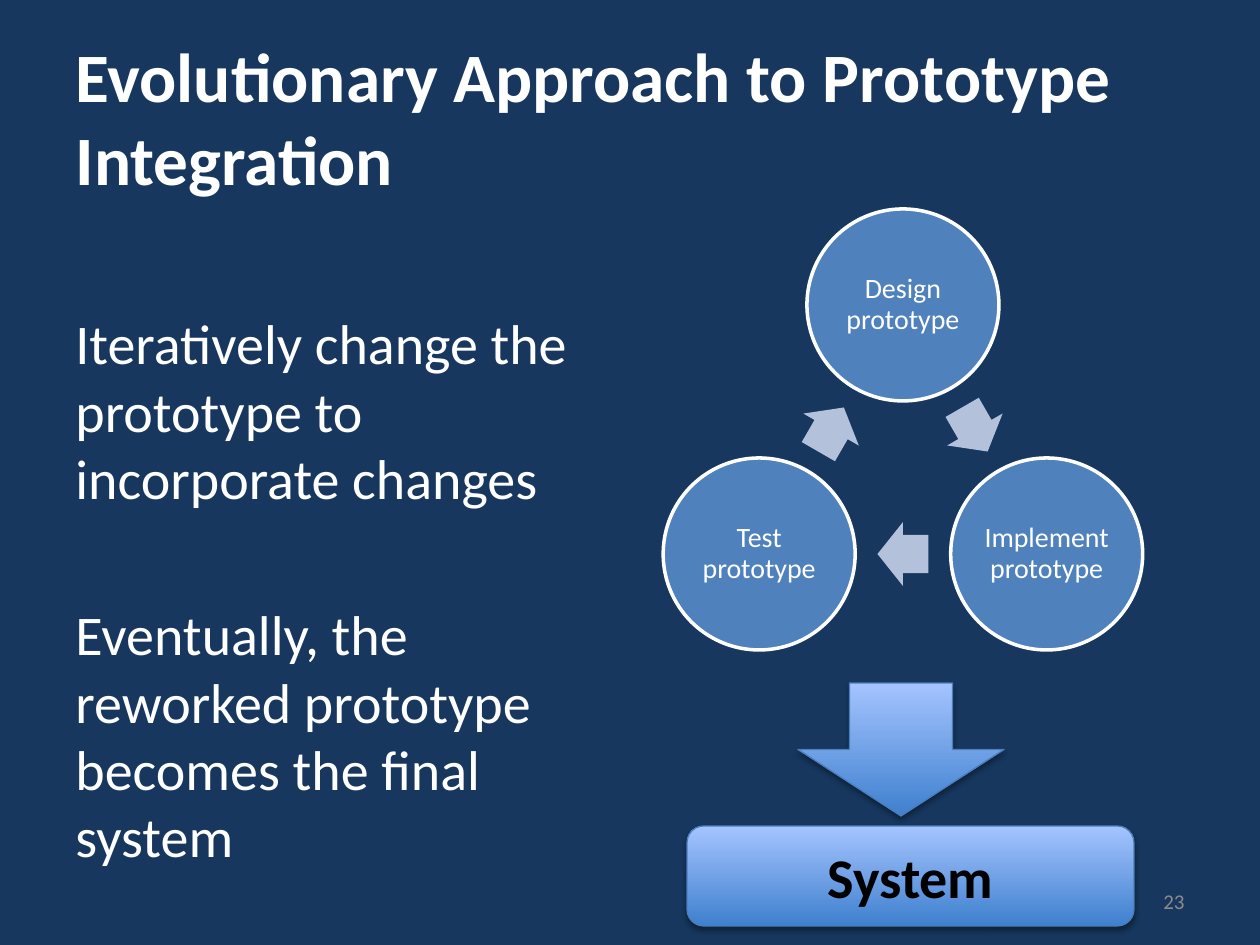
from math import cos, radians, sin

from lxml import etree
from pptx import Presentation
from pptx.dml.color import RGBColor
from pptx.enum.shapes import MSO_SHAPE as Preset
from pptx.enum.text import MSO_ANCHOR as Anchor, MSO_AUTO_SIZE as AutoSize, PP_ALIGN as Align
from pptx.oxml import parse_xml
from pptx.oxml.ns import nsdecls
from pptx.util import Emu, Pt

PX_PER_INCH = 126
FONT = "Calibri"
WHITE = "FFFFFF"
CYCLE_CENTER = (903, 471)
CYCLE_RADIUS = 166
CYCLE_STEPS = ["Design prototype", "Implement prototype", "Test prototype"]
BODY_TEXTS = [
    "Iteratively change the prototype to incorporate changes",
    "Eventually, the reworked prototype becomes the final system",
]


def px(length):
    return Emu(round(length * 914400 / PX_PER_INCH))


def color(hex_string):
    return RGBColor.from_string(hex_string)


def place(shape, left, top, width, height):
    shape.left, shape.top = px(left), px(top)
    shape.width, shape.height = px(width), px(height)


def write(shape, texts, size, hex_string, align=Align.LEFT, anchor=Anchor.MIDDLE, bold=False):
    """Fill a shape with one formatted paragraph for each text."""
    frame = shape.text_frame
    frame.text = "\n".join(texts)
    frame.word_wrap = True
    frame.auto_size = AutoSize.NONE
    frame.vertical_anchor = anchor
    for para in frame.paragraphs:
        para.alignment = align
        for span in para.runs:
            span.font.name = FONT
            span.font.size = Pt(size)
            span.font.bold = bold
            span.font.color.rgb = color(hex_string)
    return frame


def add_text(slide, bounds, texts, size, hex_string, **style):
    box = slide.shapes.add_textbox(*map(px, bounds))
    return write(box, texts, size, hex_string, **style)


def add_plain_shape(slide, preset, bounds, fill, line=None, line_width=2):
    shape = slide.shapes.add_shape(preset, *map(px, bounds))
    shape.shadow.inherit = False
    shape.fill.solid()
    shape.fill.fore_color.rgb = color(fill)
    if line:
        shape.line.color.rgb = color(line)
        shape.line.width = Pt(line_width)
    else:
        shape.line.fill.background()
    return shape


def add_glossy_shape(slide, preset, bounds):
    """Add a shape with a vertical blue gradient and a soft shadow below."""
    shape = add_plain_shape(slide, preset, bounds, "3F80CE", "4B7EBC", 0.75)
    shape.fill.gradient()
    shape.fill.gradient_angle = 90
    for stop, hex_string in zip(shape.fill.gradient_stops, ["3F80CE", "A4C4FF"]):
        stop.color.rgb = color(hex_string)
    effects = shape.element.spPr.find("{*}effectLst")
    effects.append(parse_xml(
        f'<a:outerShdw {nsdecls("a")} blurRad="{Pt(3.1)}" dist="{Pt(1.8)}" '
        'dir="5400000" rotWithShape="0"><a:srgbClr val="000000">'
        '<a:alpha val="35000"/></a:srgbClr></a:outerShdw>'))
    return shape


def orbit_bounds(angle, radius, width, height):
    """Bounds of an item centred at an angle around the cycle."""
    x = CYCLE_CENTER[0] + radius * cos(radians(angle))
    y = CYCLE_CENTER[1] + radius * sin(radians(angle))
    return x - width / 2, y - height / 2, width, height


def add_cycle(slide):
    turn = 360 / len(CYCLE_STEPS)
    for index, step in enumerate(CYCLE_STEPS):
        angle = -90 + index * turn
        circle = add_plain_shape(
            slide, Preset.OVAL, orbit_bounds(angle, CYCLE_RADIUS, 192, 192), "4F81BD", WHITE)
        frame = write(circle, [step], 16, WHITE, align=Align.CENTER)
        frame.margin_left = frame.margin_right = px(2)
        frame.margin_top = frame.margin_bottom = px(2)
        frame.paragraphs[0].line_spacing = 0.9

        middle = angle + turn / 2
        arrow = add_plain_shape(
            slide, Preset.RIGHT_ARROW, orbit_bounds(middle, CYCLE_RADIUS / 2, 51, 64), "B3C1DB")
        arrow.adjustments[0] = 0.6
        arrow.adjustments[1] = 0.5
        arrow.rotation = middle + 90


def add_title(slide, text):
    title = slide.shapes.title
    place(title, 63, 38, 1134, 157)
    write(title, [text], 39.6, WHITE, bold=True)


def add_body(slide):
    frame = add_text(slide, (63, 220, 573, 706), BODY_TEXTS, 32, WHITE, anchor=Anchor.TOP)
    frame.margin_top = px(89)
    frame.paragraphs[1].space_before = Pt(51)


def main():
    deck = Presentation()
    deck.slide_width, deck.slide_height = px(1260), px(945)
    slide = deck.slides.add_slide(deck.slide_layouts[5])
    slide.background.fill.solid()
    slide.background.fill.fore_color.rgb = color("17375E")

    add_title(slide, "Evolutionary Approach to Prototype Integration")
    add_cycle(slide)
    add_text(slide, (903, 876, 294, 50), ["23"], 12, "8C8C8C", align=Align.RIGHT)
    add_glossy_shape(slide, Preset.DOWN_ARROW, (798, 683, 206, 133))
    system = add_glossy_shape(slide, Preset.ROUNDED_RECTANGLE, (687, 826, 447, 100))
    write(system, ["System"], 32, "000000", align=Align.CENTER, bold=True)
    add_body(slide)
    deck.save("out.pptx")


if __name__ == "__main__":
    main()
